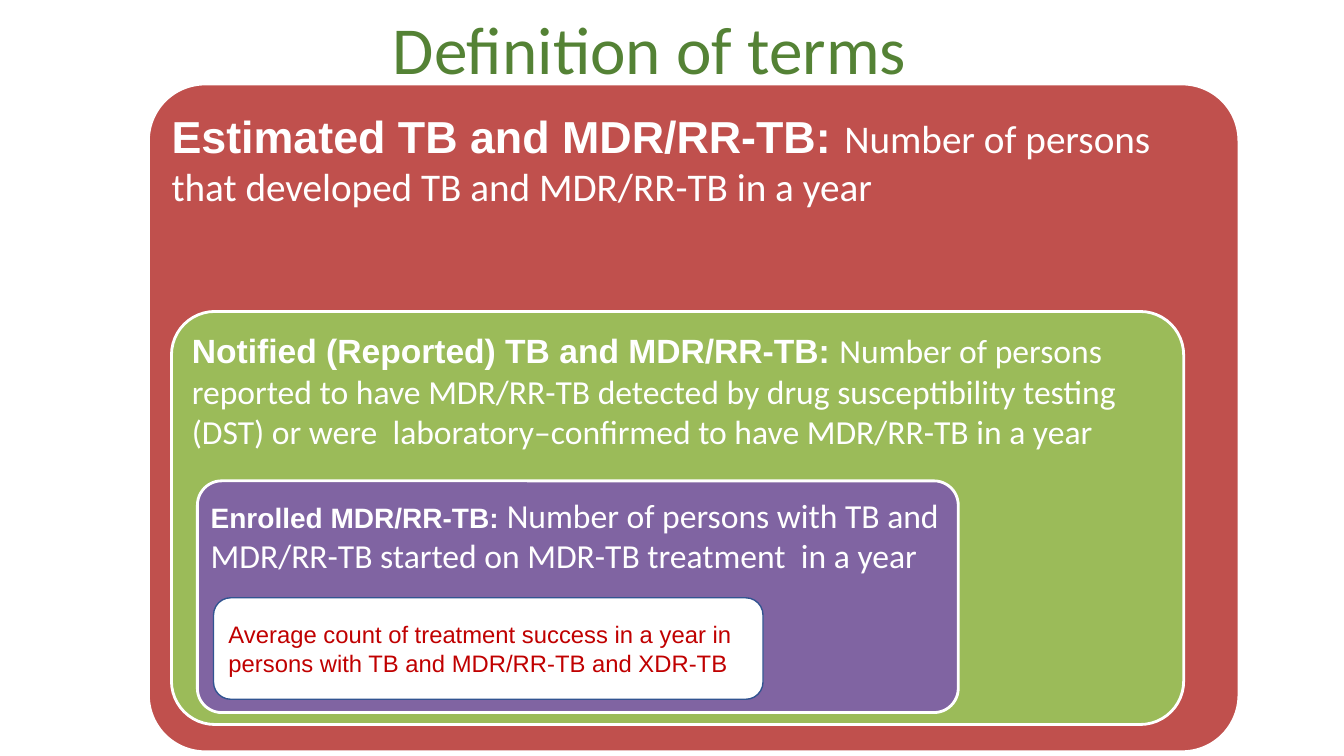
from dataclasses import dataclass

import pptx
import pptx.dml.color
import pptx.enum.shapes
import pptx.enum.text
import pptx.util

Pt = pptx.util.Pt
Anchor = pptx.enum.text.MSO_ANCHOR
Align = pptx.enum.text.PP_ALIGN
Rect = tuple[float, float, float, float]


@dataclass(frozen=True)
class Theme:
    head: str = "Arial"
    body: str = "Calibri"
    white: str = "FFFFFF"
    title: str = "548235"
    red: str = "C0504D"
    green: str = "9BBB59"
    purple: str = "8064A2"
    edge: str = "325491"
    alert: str = "C00000"
    title_size: int = 48
    note_size: int = 17


@dataclass(frozen=True)
class Level:
    box: Rect
    area: Rect
    fill: str
    round: float
    inset: float
    term: str
    term_size: int
    text: str
    text_size: int


THEME = Theme()

# Nested levels, from the outermost inwards
LEVELS = [
    Level((106, 60, 779, 477), (116.5, 71.5, 757.5, 453.5), THEME.red, 0.085, 6,
          "Estimated TB and MDR/RR-TB: ", 32,
          "Number of persons that developed TB and MDR/RR-TB in a year", 28),
    Level((122.5, 222.5, 723, 295), (132, 231, 705, 277), THEME.green, 0.105, 5,
          "Notified (Reported) TB and MDR/RR-TB: ", 24,
          "Number of persons reported to have MDR/RR-TB detected by drug "
          "susceptibility testing (DST) or were  laboratory–confirmed to have "
          "MDR/RR-TB in a year", 24),
    Level((141, 343.5, 543.5, 165.5), (145.5, 348.5, 583, 155.5), THEME.purple, 0.105, 5,
          "Enrolled MDR/RR-TB: ", 20,
          "Number of persons with TB and MDR/RR-TB started on MDR-TB treatment  "
          "in a year", 24),
]
NOTE = "Average count of treatment success in a year in persons with TB and MDR/RR-TB and XDR-TB"


def style(run, font: str, size: float, color: str, bold: bool = False) -> None:
    run.font.name = font
    run.font.size = Pt(size)
    run.font.bold = bold
    run.font.color.rgb = pptx.dml.color.RGBColor.from_string(color)


def panel(slide, box: Rect, fill: str, line: str, width: float, curve: float):
    kind = pptx.enum.shapes.MSO_SHAPE.ROUNDED_RECTANGLE
    shape = slide.shapes.add_shape(kind, *map(Pt, box))
    shape.adjustments[0] = curve
    shape.shadow.inherit = False
    shape.fill.solid()
    shape.fill.fore_color.rgb = pptx.dml.color.RGBColor.from_string(fill)
    shape.line.color.rgb = pptx.dml.color.RGBColor.from_string(line)
    shape.line.width = Pt(width)
    return shape


def add_title(slide) -> None:
    title = slide.shapes.title
    title.left, title.top, title.width, title.height = map(Pt, (221, 11.5, 497, 104))
    frame = title.text_frame
    frame.text = "Definition of terms"
    frame.auto_size = pptx.enum.text.MSO_AUTO_SIZE.NONE
    frame.vertical_anchor = Anchor.TOP
    frame.margin_top = frame.margin_left = 0
    frame.margin_right = Pt(11)
    para = frame.paragraphs[0]
    para.alignment = Align.CENTER
    para.line_spacing = 0.9
    style(para.runs[0], THEME.body, THEME.title_size, THEME.title)


def add_level(slide, level: Level) -> None:
    panel(slide, level.box, level.fill, THEME.white, 2, level.round)
    frame = slide.shapes.add_textbox(*map(Pt, level.area)).text_frame
    frame.word_wrap = True
    frame.margin_left = frame.margin_right = Pt(level.inset)
    frame.margin_top = frame.margin_bottom = Pt(level.inset)
    para = frame.paragraphs[0]
    para.text = level.term
    style(para.runs[0], THEME.head, level.term_size, THEME.white, True)
    run = para.add_run()
    run.text = level.text
    style(run, THEME.body, level.text_size, THEME.white)


def add_note(slide) -> None:
    shape = panel(slide, (152.5, 427, 392.5, 72.5), THEME.white, THEME.edge, 1, 0.17)
    frame = shape.text_frame
    frame.text = NOTE
    frame.word_wrap = True
    frame.vertical_anchor = Anchor.MIDDLE
    para = frame.paragraphs[0]
    para.alignment = Align.LEFT
    style(para.runs[0], THEME.head, THEME.note_size, THEME.alert)


def main() -> None:
    deck = pptx.Presentation()
    deck.slide_width, deck.slide_height = Pt(960), Pt(540)
    slide = deck.slides.add_slide(deck.slide_layouts[5])
    add_title(slide)
    for level in LEVELS:
        add_level(slide, level)
    add_note(slide)
    deck.save("out.pptx")


if __name__ == "__main__":
    main()
